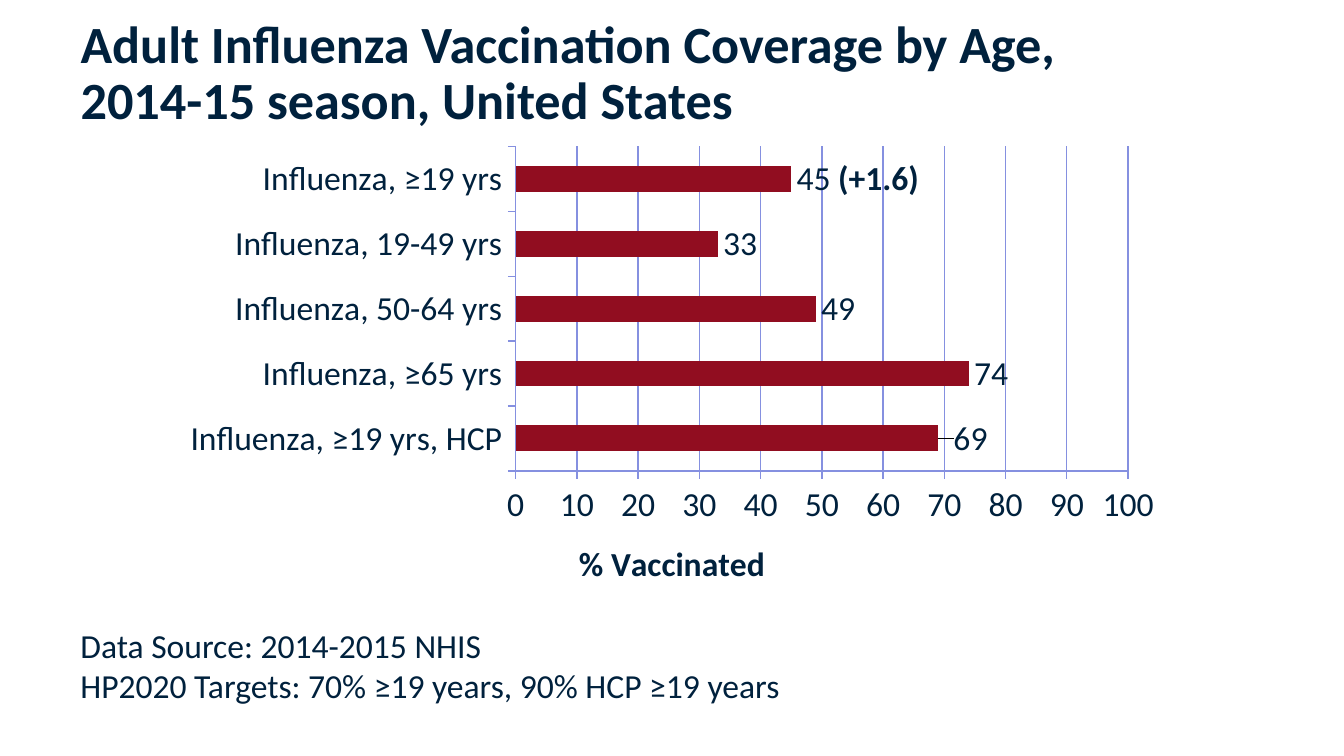
from typing import NamedTuple

from lxml import etree
from pptx import Presentation
from pptx import util as u
from pptx.chart.data import CategoryChartData
from pptx.dml.color import RGBColor
from pptx.enum import chart as kinds
from pptx.enum import text
from pptx.oxml.ns import qn

NAVY = RGBColor(0x00, 0x21, 0x3D)
CRIMSON = RGBColor(0x91, 0x0D, 0x20)
PERIWINKLE = RGBColor(0x85, 0x90, 0xE0)
FONT = "Calibri"
WIDTH = u.Inches(10)
HEIGHT = WIDTH * 9 // 16


class Area(NamedTuple):
    left: float
    top: float
    width: float
    height: float

    def lengths(self) -> list[int]:
        return [round(share * side) for share, side in zip(self, (WIDTH, HEIGHT) * 2)]


class Coverage(NamedTuple):
    group: str
    percent: int
    change: str = ""
    label_shift: float = 0


TITLE = Area(0.05, 0.014, 0.9, 0.167)
CHART = Area(0.126, 0.181, 0.747, 0.636)
NOTES = Area(0.05, 0.818, 0.714, 0.126)
PLOT_LAYOUT = {"layoutTarget": "inner", "xMode": "edge", "yMode": "edge",
               "x": 0.345, "y": 0.02, "w": 0.61, "h": 0.675}
AXIS_TITLE_LAYOUT = {"xMode": "edge", "yMode": "edge", "x": 0.402, "y": 0.827}

TITLE_LINES = ["Adult Influenza Vaccination Coverage by Age,",
               "2014-15 season, United States"]
NOTE_LINES = ["Data Source: 2014-2015 NHIS",
              "HP2020 Targets: 70% ≥19 years, 90% HCP ≥19 years"]
COVERAGES = [
    Coverage("Influenza, ≥19 yrs, HCP", 69, label_shift=0.01),
    Coverage("Influenza, ≥65 yrs", 74),
    Coverage("Influenza, 50-64 yrs", 49),
    Coverage("Influenza, 19-49 yrs", 33),
    Coverage("Influenza, ≥19 yrs", 45, "(+1.6)"),
]


def style(font, size: float = 18, bold: bool = False) -> None:
    font.name = FONT
    font.size = u.Pt(size)
    font.bold = bold
    font.color.rgb = NAVY


def add_span(para, words: str, size: float = 18, bold: bool = False) -> None:
    span = para.add_run()
    span.text = words
    style(span.font, size, bold)


def place(shape, area: Area) -> None:
    shape.left, shape.top, shape.width, shape.height = area.lengths()


def set_layout(parent, settings: dict, position: int = 0) -> None:
    layout = parent.find(qn("c:layout"))
    if layout is None:
        layout = etree.Element(qn("c:layout"))
        parent.insert(position, layout)
    manual = etree.SubElement(layout, qn("c:manualLayout"))
    for name, value in settings.items():
        etree.SubElement(manual, qn(f"c:{name}")).set("val", str(value))


def style_line(line) -> None:
    line.color.rgb = PERIWINKLE
    line.width = u.Pt(0.75)


def style_axis(axis) -> None:
    style(axis.tick_labels.font)
    style_line(axis.format.line)
    axis.major_tick_mark = kinds.XL_TICK_MARK.OUTSIDE
    axis.minor_tick_mark = kinds.XL_TICK_MARK.NONE


def add_title(page) -> None:
    box = page.shapes.title
    place(box, TITLE)
    frame = box.text_frame
    frame.word_wrap = True
    frame.auto_size = text.MSO_AUTO_SIZE.NONE
    frame.vertical_anchor = text.MSO_ANCHOR.BOTTOM
    para = frame.paragraphs[0]
    para.alignment = text.PP_ALIGN.LEFT
    para.line_spacing = u.Pt(30)
    for index, line in enumerate(TITLE_LINES):
        if index:
            para.add_line_break()
        add_span(para, line, 28, True)


def label_bars(bars) -> None:
    labels = bars.data_labels
    labels.show_value = True
    labels.position = kinds.XL_LABEL_POSITION.OUTSIDE_END
    style(labels.font)
    for index, coverage in enumerate(COVERAGES):
        label = bars.points[index].data_label
        if coverage.change:
            para = label.text_frame.paragraphs[0]
            add_span(para, f"{coverage.percent} ")
            add_span(para, coverage.change, bold=True)
            label.position = kinds.XL_LABEL_POSITION.OUTSIDE_END
        if coverage.label_shift:
            style(label.font)
            label.position = kinds.XL_LABEL_POSITION.OUTSIDE_END
            element = labels._element.findall(qn("c:dLbl"))[-1]
            set_layout(element, {"x": coverage.label_shift, "y": 0}, 1)


def add_coverage_chart(page) -> None:
    data = CategoryChartData()
    data.categories = [coverage.group for coverage in COVERAGES]
    data.add_series("Series 1", [coverage.percent for coverage in COVERAGES])
    chart = page.shapes.add_chart(
        kinds.XL_CHART_TYPE.BAR_CLUSTERED, *CHART.lengths(), data).chart
    style(chart.font)
    chart.has_legend = False
    chart.has_title = False
    plot = chart.plots[0]
    set_layout(plot._element.getparent(), PLOT_LAYOUT)

    style_axis(chart.category_axis)
    values = chart.value_axis
    style_axis(values)
    values.minimum_scale, values.maximum_scale, values.major_unit = 0, 100, 10
    values.has_major_gridlines = True
    style_line(values.major_gridlines.format.line)
    add_span(values.axis_title.text_frame.paragraphs[0], "% Vaccinated", bold=True)
    set_layout(values.axis_title._element, AXIS_TITLE_LAYOUT)

    plot.gap_width = 150
    plot.vary_by_categories = False
    bars = plot.series[0]
    bars.format.fill.solid()
    bars.format.fill.fore_color.rgb = CRIMSON
    label_bars(bars)


def add_notes(page) -> None:
    frame = page.shapes.add_textbox(*NOTES.lengths()).text_frame
    frame.word_wrap = True
    frame.auto_size = text.MSO_AUTO_SIZE.SHAPE_TO_FIT_TEXT
    for index, line in enumerate(NOTE_LINES):
        para = frame.add_paragraph() if index else frame.paragraphs[0]
        add_span(para, line)


def main() -> None:
    deck = Presentation()
    deck.slide_width, deck.slide_height = WIDTH, HEIGHT
    page = deck.slides.add_slide(deck.slide_layouts.get_by_name("Title Only"))
    add_title(page)
    add_coverage_chart(page)
    add_notes(page)
    deck.save("out.pptx")


if __name__ == "__main__":
    main()
